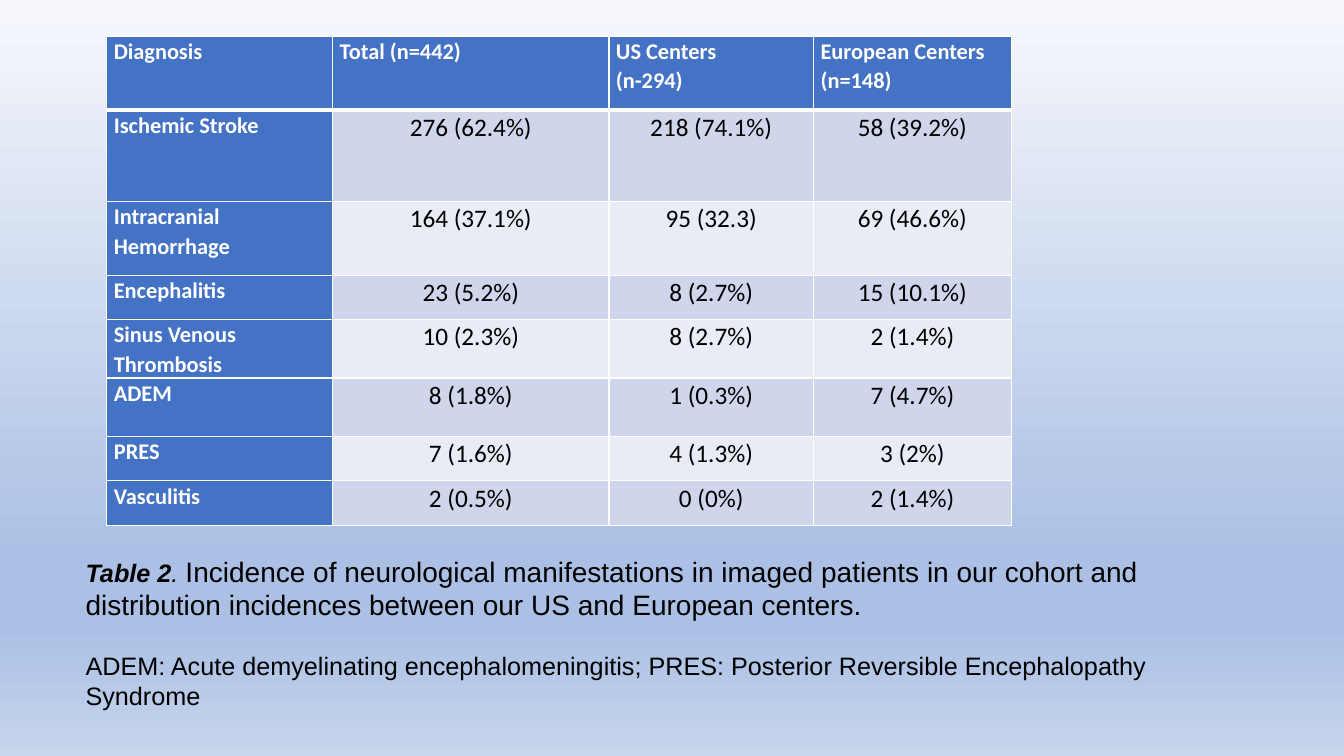
import copy
import pptx
import pptx.util
import pptx.dml.color
import pptx.enum.text
import pptx.oxml
import pptx.oxml.ns

Inches = pptx.util.Inches
Pt = pptx.util.Pt
theme = {
    "head": "4472C4", "odd": "CFD5EA", "even": "E9EBF5",
    "light": "FFFFFF", "dark": "000000",
    "back": [(0, "F6F8FC"), (0.74, "ABC0E4"), (0.83, "ABC0E4"), (1, "C7D5ED")],
    "grid": "Calibri", "note": "Arial",
    "label": 16, "value": 18, "lead": 20,
}


def style(run, face, size, color, bold=False, slant=False):
    font = run.font
    font.name, font.size = face, Pt(size)
    font.color.rgb = pptx.dml.color.RGBColor.from_string(color)
    font.bold, font.italic = bold, slant


def edge(cell, side, width):
    line = pptx.oxml.parse_xml(
        f'<a:{side} xmlns:a="http://schemas.openxmlformats.org/drawingml/2006/main" '
        f'w="{Pt(width)}"><a:solidFill><a:srgbClr val="{theme["light"]}"/>'
        f'</a:solidFill></a:{side}>')
    props = cell._tc.get_or_add_tcPr()
    props.insert(len(props) - 1, line)


deck = pptx.Presentation()
deck.slide_width, deck.slide_height = Inches(13.33), Inches(7.5)
slide = deck.slides.add_slide(deck.slide_layouts[6])

fill = slide.background.fill
fill.gradient()
fill.gradient_angle = 270
stops = slide.element.find(".//" + pptx.oxml.ns.qn("a:gsLst"))
for _ in theme["back"][2:]:
    stops.append(copy.deepcopy(stops[0]))
for stop, (place, color) in zip(fill.gradient_stops, theme["back"]):
    stop.position = place
    stop.color.rgb = pptx.dml.color.RGBColor.from_string(color)

rows = [
    ("Diagnosis", "Total (n=442)", "US Centers\n(n-294)", "European Centers (n=148)"),
    ("Ischemic Stroke", "276 (62.4%)", "218 (74.1%)", "58 (39.2%)"),
    ("Intracranial Hemorrhage", "164 (37.1%)", "95 (32.3)", "69 (46.6%)"),
    ("Encephalitis", "23 (5.2%)", "8 (2.7%)", "15 (10.1%)"),
    ("Sinus Venous Thrombosis", "10 (2.3%)", "8 (2.7%)", "2 (1.4%)"),
    ("ADEM", "8 (1.8%)", "1 (0.3%)", "7 (4.7%)"),
    ("PRES", "7 (1.6%)", "4 (1.3%)", "3 (2%)"),
    ("Vasculitis", "2 (0.5%)", "0 (0%)", "2 (1.4%)"),
]
widths = [2.24, 2.74, 2.03, 1.96]
heights = [0.73, 0.91, 0.73, 0.44, 0.58, 0.58, 0.44, 0.44]
table = slide.shapes.add_table(
    len(rows), len(widths), Inches(1.06), Inches(0.36),
    Inches(sum(widths)), Inches(sum(heights))).table
table.first_col = True
for col, width in zip(table.columns, widths):
    col.width = Inches(width)
for row, height in zip(table.rows, heights):
    row.height = Inches(height)

for r, row in enumerate(rows):
    for c, text in enumerate(row):
        label = r == 0 or c == 0
        cell = table.cell(r, c)
        cell.margin_left = cell.margin_right = Inches(0.07)
        cell.margin_top = cell.margin_bottom = 0
        shade = theme["head" if label else "odd" if r % 2 else "even"]
        cell.fill.solid()
        cell.fill.fore_color.rgb = pptx.dml.color.RGBColor.from_string(shade)
        edge(cell, "lnL", 1)
        edge(cell, "lnR", 1)
        edge(cell, "lnT", 3 if r == 1 else 1)
        edge(cell, "lnB", 3 if r == 0 else 1)
        cell.text_frame.text = text
        for para in cell.text_frame.paragraphs:
            para.line_spacing = 1.07
            if not label:
                para.alignment = pptx.enum.text.PP_ALIGN.CENTER
            for run in para.runs:
                style(run, theme["grid"], theme["label" if label else "value"],
                      theme["light" if label else "dark"], label)

frame = slide.shapes.add_textbox(
    Inches(0.75), Inches(5.45), Inches(11.19), Inches(1.99)).text_frame
frame.word_wrap = True
lead = frame.paragraphs[0]
parts = [
    ("Table 2", "value", True, True),
    (". ", "value", False, True),
    ("Incidence of neurological manifestations in imaged patients in our cohort "
     "and distribution incidences between our US and European centers.",
     "lead", False, False),
]
for text, size, bold, slant in parts:
    run = lead.add_run()
    run.text = text
    style(run, theme["note"], theme[size], theme["dark"], bold, slant)
key = frame.add_paragraph()
key.text = ("ADEM: Acute demyelinating encephalomeningitis; "
            "PRES: Posterior Reversible Encephalopathy Syndrome")
key.space_before = Pt(20.7)
style(key.runs[0], theme["note"], theme["value"], theme["dark"])

deck.save("out.pptx")
